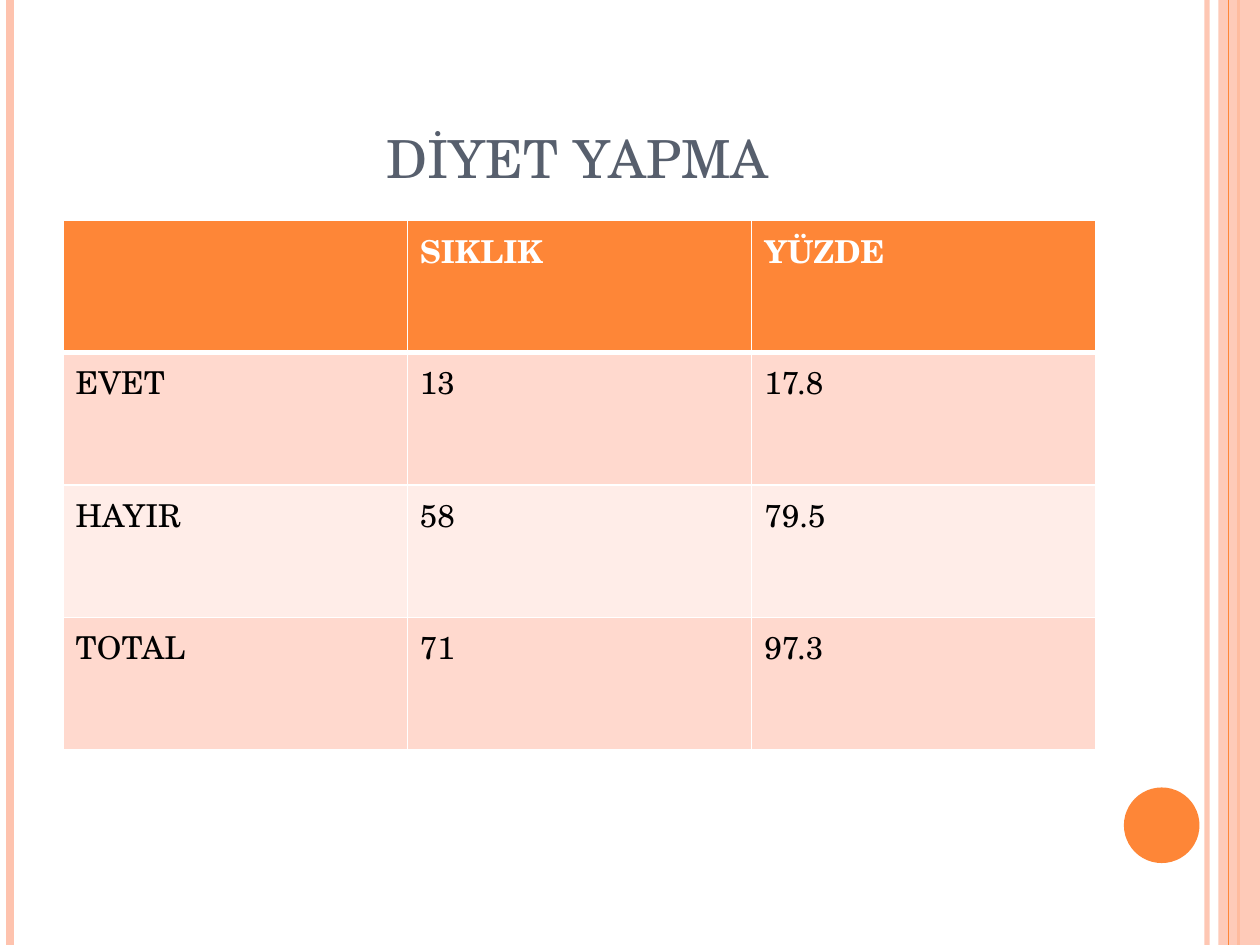
from lxml import etree
from pptx import Presentation
from pptx.dml.color import RGBColor
from pptx.enum.shapes import MSO_CONNECTOR, MSO_SHAPE
from pptx.enum.text import MSO_ANCHOR, PP_ALIGN
from pptx.oxml.ns import qn
from pptx.util import Inches, Pt

STRAIGHT = MSO_CONNECTOR.STRAIGHT
RECTANGLE, OVAL = MSO_SHAPE.RECTANGLE, MSO_SHAPE.OVAL
BOTTOM, CENTER = MSO_ANCHOR.BOTTOM, PP_ALIGN.CENTER

ORANGE = RGBColor(0xFE, 0x86, 0x37)
PEACH = RGBColor(0xFE, 0xC3, 0xAE)
BAND_DARK = RGBColor(0xFF, 0xD9, 0xCE)
BAND_LIGHT = RGBColor(0xFF, 0xED, 0xE8)
SLATE = RGBColor(0x57, 0x5F, 0x6D)
WHITE = RGBColor(0xFF, 0xFF, 0xFF)
BLACK = RGBColor(0, 0, 0)

FONT = "TeX Gyre Schola"
WIDTH, HEIGHT = 10, 7.5
MARGIN = 0.5
TABLE_TOP, TABLE_WIDTH, ROW_HEIGHT = 1.75, 8.2, 1.05
ROWS = [
    ("", "SIKLIK", "YÜZDE"),
    ("EVET", "13", "17.8"),
    ("HAYIR", "58", "79.5"),
    ("TOTAL", "71", "97.3"),
]


def set_opacity(element, percent):
    color = next(element.iter(qn("a:srgbClr")))
    etree.SubElement(color, qn("a:alpha"), val=str(percent * 1000))


def add_stripe(slide, x, color, width, opacity=100):
    stripe = slide.shapes.add_connector(
        STRAIGHT, Inches(x), 0, Inches(x), Inches(HEIGHT)
    )
    stripe.line.color.rgb = color
    stripe.line.width = Pt(width)
    properties = stripe._element.spPr
    if opacity < 100:
        set_opacity(properties, opacity)
    etree.SubElement(properties, qn("a:effectLst"))


def add_filled_shape(slide, kind, box, color, opacity=100):
    shape = slide.shapes.add_shape(kind, *map(Inches, box))
    shape.shadow.inherit = False
    shape.fill.solid()
    shape.fill.fore_color.rgb = color
    shape.line.fill.background()
    if opacity < 100:
        set_opacity(shape._element.spPr, opacity)


def format_text(paragraph, size, color, bold=False):
    for run in paragraph.runs:
        run.font.name = FONT
        run.font.size = Pt(size)
        run.font.color.rgb = color
        run.font.bold = bold


def add_title(slide, text, box):
    title = slide.shapes.add_textbox(*map(Inches, box))
    text_frame = title.text_frame
    text_frame.word_wrap = True
    text_frame.vertical_anchor = BOTTOM
    text_frame.text = text
    paragraph = text_frame.paragraphs[0]
    paragraph.alignment = CENTER
    format_text(paragraph, 30, SLATE)


def set_borders(cell, bottom_width):
    properties = cell._tc.get_or_add_tcPr()
    widths = {"a:lnL": 1, "a:lnR": 1, "a:lnT": 1, "a:lnB": bottom_width}
    for position, (tag, width) in enumerate(widths.items()):
        border = etree.Element(qn(tag), w=str(Pt(width)))
        fill = etree.SubElement(border, qn("a:solidFill"))
        etree.SubElement(fill, qn("a:srgbClr"), val=str(WHITE))
        properties.insert(position, border)


def add_frequency_table(slide):
    row_count, column_count = len(ROWS), len(ROWS[0])
    table = slide.shapes.add_table(
        row_count,
        column_count,
        Inches(MARGIN),
        Inches(TABLE_TOP),
        Inches(TABLE_WIDTH),
        Inches(ROW_HEIGHT * row_count),
    ).table
    for row_index, values in enumerate(ROWS):
        header = row_index == 0
        band = BAND_DARK if row_index % 2 else BAND_LIGHT
        for column_index, value in enumerate(values):
            cell = table.cell(row_index, column_index)
            cell.text_frame.text = value
            format_text(
                cell.text_frame.paragraphs[0], 18, WHITE if header else BLACK, header
            )
            cell.fill.solid()
            cell.fill.fore_color.rgb = ORANGE if header else band
            set_borders(cell, 3 if header else 1)
            if row_index == 1:
                cell._tc.tcPr.find(qn("a:lnT")).set("w", str(Pt(3)))


def main():
    presentation = Presentation()
    presentation.slide_width = Inches(WIDTH)
    presentation.slide_height = Inches(HEIGHT)
    slide = presentation.slides.add_slide(presentation.slide_layouts[6])
    add_stripe(slide, 9.58, PEACH, 3, 93)
    add_stripe(slide, 0.08, PEACH, 4.5)
    add_stripe(slide, 9.83, ORANGE, 1.5)
    add_filled_shape(slide, RECTANGLE, (9.67, 0, 0.33, HEIGHT), PEACH, 87)
    add_stripe(slide, 9.75, ORANGE, 0.75)
    add_filled_shape(slide, OVAL, (8.92, 6.25, 0.6, 0.6), ORANGE)
    add_title(slide, "DİYET YAPMA", (MARGIN, 0.3, 8.17, 1.25))
    add_frequency_table(slide)
    presentation.save("out.pptx")


if __name__ == "__main__":
    main()
